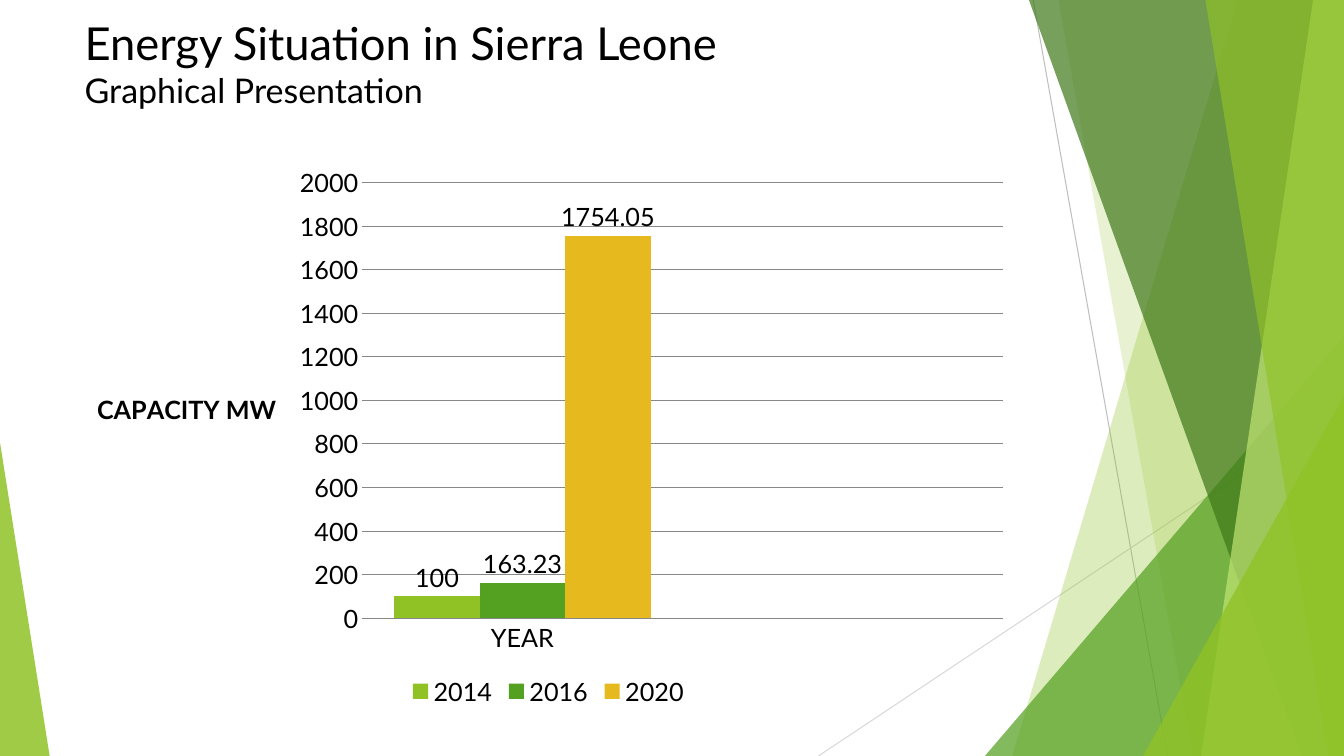
import pptx
import pptx.util
import pptx.chart.data
import pptx.dml.color
import pptx.enum.chart
import pptx.enum.shapes
import pptx.enum.text
import pptx.oxml.ns
import pptx.oxml.xmlchemy

Pt = pptx.util.Pt
qn = pptx.oxml.ns.qn
OxmlElement = pptx.oxml.xmlchemy.OxmlElement

# Content
TITLE_LINES = [("Energy Situation in Sierra Leone", 32.4),
               ("Graphical Presentation", 24.3)]
CATEGORIES = ["YEAR", ""]
CAPACITY = [("2014", 100, "lime"), ("2016", 163.23, "green"), ("2020", 1754.05, "gold")]
AXIS_TITLE = "CAPACITY MW"

# Style and geometry, in points
COLORS = {"lime": "90C226", "green": "54A021", "gold": "E6B91E", "forest": "3F7819",
          "pale": "C0E474", "grey": "BFBFBF", "mist": "D9D9D9", "grid": "878787",
          "text": "000000", "page": "FFFFFF"}
FONT = "Lato"
WIDTH, HEIGHT = 960, 540
TITLE_BOX = (53.3, 7.2, 669, 85.7)
CHART_BOX = (53.3, 111.6, 676.8, 396.7)
RAYS = [((738, 0), (834, HEIGHT), "grey"), ((WIDTH, 290), (584.6, HEIGHT), "mist")]
# Facets from back to front: outline, geometry, colour, opacity in percent.
# A band holds its top and bottom left x; a wedge holds left, top, width, apex.
FACETS = [("band", (884, 723), "lime", 30),
          ("band", (756, 852), "lime", 20),
          ("wedge", (703.5, 240, 256.5, 1), "green", 72),
          ("band", (735, 930), "forest", 70),
          ("band", (938, 858), "pale", 70),
          ("band", (861, 949), "lime", 65),
          ("wedge", (816.5, 283, 143.5, 1), "lime", 80),
          ("wedge", (0, 316, 35.5, 0), "lime", 85)]


def rgb(color):
    return pptx.dml.color.RGBColor.from_string(COLORS[color])


def style_font(font, size, bold=False):
    font.name, font.size, font.bold = FONT, Pt(size), bold
    font.color.rgb = rgb("text")


def add_ray(shapes, start, end, color):
    ray = shapes.add_connector(pptx.enum.shapes.MSO_CONNECTOR.STRAIGHT,
                               *[Pt(v) for v in start + end])
    ray.line.color.rgb = rgb(color)
    ray.line.width = Pt(0.75)
    ray._element.spPr.append(OxmlElement("a:effectLst"))


def add_facet(shapes, outline, geometry, color, opacity):
    if outline == "band":
        top_x, bottom_x = geometry
        builder = shapes.build_freeform(Pt(top_x), 0)
        builder.add_line_segments([(Pt(x), Pt(y)) for x, y in
                                   [(WIDTH, 0), (WIDTH, HEIGHT), (bottom_x, HEIGHT)]])
        facet = builder.convert_to_shape()
    else:
        left, top, width, apex = geometry
        facet = shapes.add_shape(pptx.enum.shapes.MSO_SHAPE.ISOSCELES_TRIANGLE,
                                 Pt(left), Pt(top), Pt(width), Pt(HEIGHT - top))
        facet.adjustments[0] = apex
    facet.shadow.inherit = False
    facet.line.fill.background()
    facet.fill.solid()
    facet.fill.fore_color.rgb = rgb(color)
    alpha = OxmlElement("a:alpha")
    alpha.set("val", str(opacity * 1000))
    facet._element.spPr.find(qn("a:solidFill"))[0].append(alpha)


def fill_title(title):
    title.left, title.top, title.width, title.height = [Pt(v) for v in TITLE_BOX]
    frame = title.text_frame
    frame.word_wrap = True
    frame.auto_size = pptx.enum.text.MSO_AUTO_SIZE.NONE
    frame.vertical_anchor = pptx.enum.text.MSO_ANCHOR.TOP
    heading = frame.paragraphs[0]
    heading.alignment = pptx.enum.text.PP_ALIGN.LEFT
    for number, (line, size) in enumerate(TITLE_LINES):
        if number:
            heading.add_line_break()
        run = heading.add_run()
        run.text = line
        style_font(run.font, size)


def add_capacity_chart(shapes):
    data = pptx.chart.data.CategoryChartData()
    data.categories = CATEGORIES
    for year, capacity, _ in CAPACITY:
        data.add_series(year, [capacity, None])
    chart = shapes.add_chart(pptx.enum.chart.XL_CHART_TYPE.COLUMN_CLUSTERED,
                             *[Pt(v) for v in CHART_BOX], data).chart
    style_font(chart.font, 18)
    chart.has_title = False
    chart.has_legend = True
    chart.legend.position = pptx.enum.chart.XL_LEGEND_POSITION.BOTTOM
    chart.legend.include_in_layout = False

    # Columns and their values
    plot = chart.plots[0]
    plot.gap_width, plot.overlap, plot.vary_by_categories = 75, 0, False
    for series, (_, _, color) in zip(plot.series, CAPACITY):
        series.format.fill.solid()
        series.format.fill.fore_color.rgb = rgb(color)
        labels = series.data_labels
        labels.show_value = True
        labels.position = pptx.enum.chart.XL_LABEL_POSITION.OUTSIDE_END
        style_font(labels.font, 18)

    # Axes
    years, megawatts = chart.category_axis, chart.value_axis
    for axis in (years, megawatts):
        axis.major_tick_mark = pptx.enum.chart.XL_TICK_MARK.NONE
        axis.minor_tick_mark = pptx.enum.chart.XL_TICK_MARK.NONE
    years.format.line.color.rgb = rgb("grid")
    megawatts.minimum_scale, megawatts.maximum_scale, megawatts.major_unit = 0, 2000, 200
    megawatts.format.line.fill.background()
    megawatts.has_major_gridlines = True
    megawatts.major_gridlines.format.line.color.rgb = rgb("grid")
    megawatts.major_gridlines.format.line.width = Pt(0.75)
    caption = megawatts.axis_title.text_frame
    run = caption.paragraphs[0].add_run()
    run.text = AXIS_TITLE
    style_font(run.font, 18, bold=True)
    body = caption._txBody.find(qn("a:bodyPr"))
    body.set("rot", "0")
    body.set("vert", "horz")


def main():
    deck = pptx.Presentation()
    deck.slide_width, deck.slide_height = Pt(WIDTH), Pt(HEIGHT)
    slide = deck.slides.add_slide(deck.slide_layouts[5])
    slide.background.fill.solid()
    slide.background.fill.fore_color.rgb = rgb("page")
    for ray in RAYS:
        add_ray(slide.shapes, *ray)
    for facet in FACETS:
        add_facet(slide.shapes, *facet)
    fill_title(slide.shapes.title)
    add_capacity_chart(slide.shapes)
    deck.save("out.pptx")


if __name__ == "__main__":
    main()
